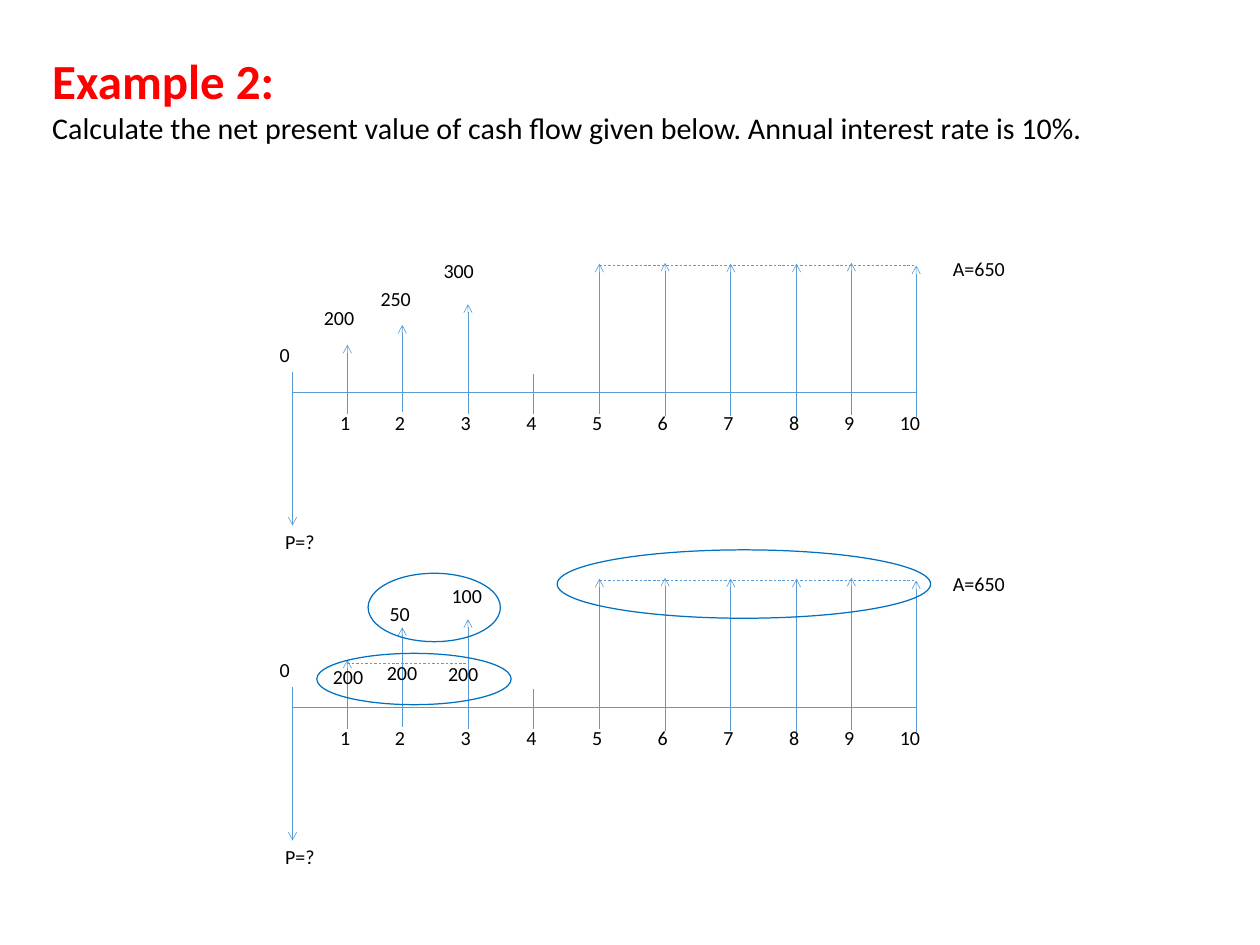
"""Build the net present value example slide with two cash flow diagrams."""
from itertools import accumulate

from lxml import etree
from pptx import Presentation
from pptx import util as u
from pptx.dml.color import RGBColor
from pptx.enum import dml, shapes, text
from pptx.oxml.ns import qn

COLORS = {"heading": "FF0000", "body": "000000", "flow": "5B9BD5", "group": "0070C0"}
FONT = "Calibri"
HEADING = [
    ("Example 2:", {"size": u.Pt(39.2), "bold": True}, "heading"),
    ("Calculate the net present value of cash flow given below. "
     "Annual interest rate is 10%. \u00a0", {"size": u.Pt(24), "bold": False}, "body"),
]

START, END = 3.25, 10.18
YEAR_GAPS = [0.61, 0.61] + [0.73] * 6 + [0.61, 0.72]
YEARS = list(accumulate(YEAR_GAPS, initial=START))
TICK_RISES = [0.23, 0.21, 0.23, 0.21, 0.21, 0.21, 0.19, 0.19, 0.18, 0.2, 0.18]
TICK_LENGTH = 0.45
LABEL_HEIGHT = 0.37
PAYMENT, ANNUITY_LEVEL = -1.48, 1.41
ANNUITY = {5: 1.43, 6: 1.44, 7: 1.43, 8: 1.43, 9: 1.44, 10: 1.41}
SHARED_LABELS = [("A=650", 10.49, -1.56, 1.09), ("0", 3.01, -0.6, 0.36),
                 ("P=?", 3.07, 1.48, 0.97)]

DIAGRAMS = [
    {"axis": 4.36,
     "receipts": {1: 0.53, 2: 0.75, 3: 0.98},
     "levels": [(5, 10, ANNUITY_LEVEL)],
     "amounts": [("200", 3.5, -1.01), ("250", 4.13, -1.22), ("300", 4.83, -1.54)],
     "groups": []},
    {"axis": 7.86,
     "receipts": {1: 0.53, 2: 0.89, 3: 0.98},
     "levels": [(5, 10, ANNUITY_LEVEL), (1, 3, 0.49)],
     "amounts": [("200", 3.6, -0.53), ("50", 4.23, -1.23), ("100", 4.92, -1.43),
                 ("200", 4.2, -0.57), ("200", 4.88, -0.56)],
     "groups": [(3.52, -0.6, 2.16, 0.57), (4.09, -1.49, 1.47, 0.76),
                (6.19, -1.75, 4.15, 0.76)]},
]


def color(name):
    return RGBColor.from_string(COLORS[name])


def apply(target, values):
    for key, value in values.items():
        setattr(target, key, value)


def place(shape, left, top, width, height):
    apply(shape, {"left": u.Inches(left), "top": u.Inches(top),
                  "width": u.Inches(width), "height": u.Inches(height)})


def write(paragraph, words, values, tone):
    run = paragraph.add_run()
    run.text = words
    apply(run.font, {"name": FONT, **values})
    run.font.color.rgb = color(tone)


def add_flow(slide, x1, y1, x2, y2, arrow=False, dashed=False):
    flow = slide.shapes.add_connector(
        shapes.MSO_CONNECTOR.STRAIGHT, *map(u.Inches, (x1, y1, x2, y2)))
    flow.line.color.rgb = color("flow")
    flow.line.width = u.Pt(0.5)
    if dashed:
        flow.line.dash_style = dml.MSO_LINE.DASH
    if arrow:
        etree.SubElement(flow.line._get_or_add_ln(), qn("a:tailEnd"), type="arrow")
    etree.SubElement(flow._element.spPr, qn("a:effectLst"))


def add_label(slide, words, left, top, width):
    label = slide.shapes.add_textbox(*map(u.Inches, (left, top, width, LABEL_HEIGHT)))
    apply(label.text_frame, {"word_wrap": True,
                             "auto_size": text.MSO_AUTO_SIZE.SHAPE_TO_FIT_TEXT})
    write(label.text_frame.paragraphs[0], words, {"size": u.Pt(16)}, "body")


def add_group(slide, left, top, width, height):
    group = slide.shapes.add_shape(
        shapes.MSO_SHAPE.OVAL, *map(u.Inches, (left, top, width, height)))
    group.shadow.inherit = False
    group.fill.background()
    group.line.color.rgb = color("group")
    group.line.width = u.Pt(1)


def add_heading(slide):
    heading = slide.shapes.title
    place(heading, 0.48, 0.51, 12.22, 1.16)
    frame = heading.text_frame
    apply(frame, {"word_wrap": True, "vertical_anchor": text.MSO_ANCHOR.TOP,
                  "auto_size": text.MSO_AUTO_SIZE.SHAPE_TO_FIT_TEXT})
    for index, (words, values, tone) in enumerate(HEADING):
        paragraph = frame.add_paragraph() if index else frame.paragraphs[0]
        apply(paragraph, {"alignment": text.PP_ALIGN.LEFT, "space_before": u.Pt(0)})
        write(paragraph, words, values, tone)


def add_diagram(slide, diagram):
    axis = diagram["axis"]
    add_flow(slide, START, axis, END, axis)
    for x, rise in zip(YEARS, TICK_RISES):
        add_flow(slide, x, axis - rise, x, axis - rise + TICK_LENGTH)
    for year, rise in {0: PAYMENT, **diagram["receipts"], **ANNUITY}.items():
        add_flow(slide, YEARS[year], axis, YEARS[year], axis - rise, arrow=True)
    for first, last, level in diagram["levels"]:
        add_flow(slide, YEARS[first], axis - level, YEARS[last], axis - level, dashed=True)
    for words, left, drop in diagram["amounts"]:
        add_label(slide, words, left, axis + drop, 0.73)
    for words, left, drop, width in SHARED_LABELS:
        add_label(slide, words, left, axis + drop, width)
    for year, x in enumerate(YEARS[1:], start=1):
        inset, width = (0.18, 0.36) if year < 10 else (0.28, 0.61)
        add_label(slide, str(year), x - inset, axis + 0.15, width)
    for left, drop, width, height in diagram["groups"]:
        add_group(slide, left, axis + drop, width, height)


def main():
    deck = Presentation()
    apply(deck, {"slide_width": u.Inches(14), "slide_height": u.Inches(10.5)})
    slide = deck.slides.add_slide(deck.slide_layouts[5])
    add_heading(slide)
    for diagram in DIAGRAMS:
        add_diagram(slide, diagram)
    deck.save("out.pptx")


if __name__ == "__main__":
    main()
